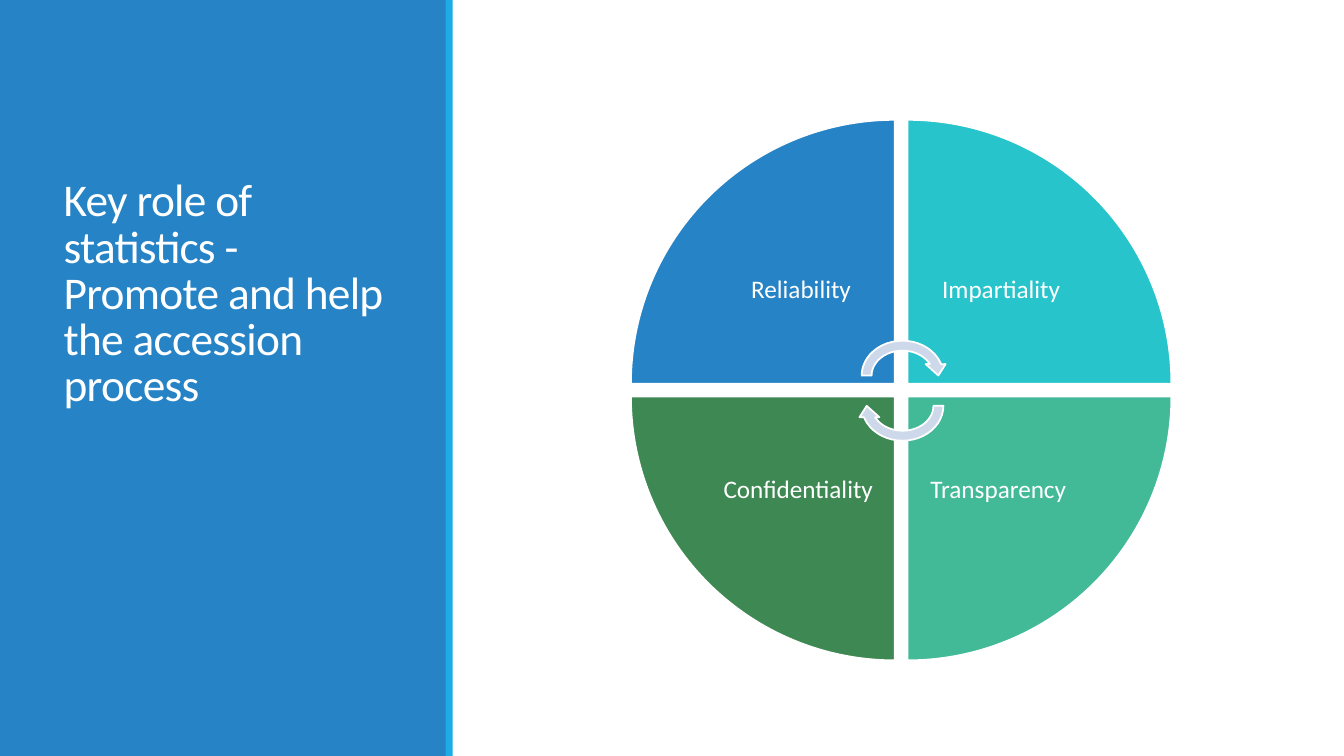
from dataclasses import dataclass

from pptx import Presentation
from pptx.dml.color import RGBColor
from pptx.enum.shapes import MSO_SHAPE as Shape
from pptx.enum.text import MSO_ANCHOR as Anchor, MSO_AUTO_SIZE as AutoSize, PP_ALIGN as Align
from pptx.util import Cm, Pt

FONT = "Calibri"
WHITE, BLUE, SKY, PALE = "FFFFFF", "2683C6", "1CADE4", "CDD9EA"
SLIDE_WIDTH, SLIDE_HEIGHT = 33.87, 19.05

# Lengths of the wheel in centimetres
WHEEL_LEFT, WHEEL_TOP = 15.9, 3.02
WEDGE, STEP, LABEL = 6.65, 6.97, 4.72
ARROW_LEFT, ARROW_WIDTH, ARROW_HEIGHT = 21.59, 2.31, 2.01


@dataclass
class Box:
    left: float
    top: float
    width: float
    height: float

    def lengths(self):
        return [Cm(value) for value in (self.left, self.top, self.width, self.height)]


@dataclass
class Panel:
    box: Box
    color: str


@dataclass
class Quarter:
    text: str
    color: str
    column: int
    row: int
    rotation: int


@dataclass
class Arrow:
    top: float
    rotation: int


PANELS = [
    Panel(Box(0, 0, 11.25, SLIDE_HEIGHT), BLUE),
    Panel(Box(11.23, 0, 0.18, SLIDE_HEIGHT), SKY),
]
QUARTERS = [
    Quarter("Reliability", BLUE, 0, 0, 0),
    Quarter("Impartiality", "28C4CC", 1, 0, 90),
    Quarter("Transparency ", "42BA97", 1, 1, 180),
    Quarter("Confidentiality ", "3E8853", 0, 1, 270),
]
ARROWS = [Arrow(8.46, 0), Arrow(9.22, 180)]


def rgb(color: str) -> RGBColor:
    return RGBColor.from_string(color)


def apply(target, values: dict) -> None:
    for name, value in values.items():
        setattr(target, name, value)


def add_filled(shapes, kind: Shape, box: Box, color: str, rotation: int = 0, outlined: bool = True):
    shape = shapes.add_shape(kind, *box.lengths())
    shape.rotation = rotation
    shape.shadow.inherit = False
    shape.fill.solid()
    shape.fill.fore_color.rgb = rgb(color)
    if outlined:
        shape.line.color.rgb = rgb(WHITE)
        shape.line.width = Pt(1.25)
    else:
        shape.line.fill.background()
    return shape


def write(shape, text: str, size: float, frame_format: dict, paragraph_format: dict):
    frame = shape.text_frame
    apply(frame, {"word_wrap": True, "auto_size": AutoSize.NONE, **frame_format})
    paragraph = frame.paragraphs[0]
    apply(paragraph, paragraph_format)
    run = paragraph.add_run()
    run.text = text
    apply(run.font, {"name": FONT, "size": Pt(size)})
    run.font.color.rgb = rgb(WHITE)
    return run


def add_quarter(shapes, quarter: Quarter) -> None:
    left = WHEEL_LEFT + quarter.column * STEP
    top = WHEEL_TOP + quarter.row * STEP
    add_filled(shapes, Shape.PIE_WEDGE, Box(left, top, WEDGE, WEDGE), quarter.color, quarter.rotation)

    # The label sits in the corner nearest the centre of the wheel
    inset = WEDGE - LABEL
    box = Box(left + inset * (1 - quarter.column), top + inset * (1 - quarter.row), LABEL, LABEL)
    margins = {f"margin_{side}": Cm(0.36) for side in ("left", "top", "right", "bottom")}
    write(shapes.add_textbox(*box.lengths()), quarter.text, 18,
          {"vertical_anchor": Anchor.MIDDLE, **margins},
          {"alignment": Align.CENTER, "line_spacing": 0.9})


def add_title(slide) -> None:
    title = slide.shapes.title
    left, top, width, height = Box(1.35, 4.14, 8.89, 6.35).lengths()
    apply(title, {"left": left, "top": top, "width": width, "height": height})
    run = write(title, "Key role of statistics - Promote and help the accession process", 32.4,
                {"vertical_anchor": Anchor.BOTTOM},
                {"alignment": Align.LEFT, "line_spacing": 0.85})
    run.font._element.set("spc", "-50")
    # Bring the title in front of the side panel
    slide.shapes._spTree.append(title._element)


def main() -> None:
    presentation = Presentation()
    apply(presentation, {"slide_width": Cm(SLIDE_WIDTH), "slide_height": Cm(SLIDE_HEIGHT)})
    slide = presentation.slides.add_slide(presentation.slide_layouts[5])

    # Side panel with the title
    for panel in PANELS:
        add_filled(slide.shapes, Shape.RECTANGLE, panel.box, panel.color, outlined=False)
    add_title(slide)

    # Wheel of four principles with the arrows at its hub
    wheel = slide.shapes.add_group_shape()
    for quarter in QUARTERS:
        add_quarter(wheel.shapes, quarter)
    for arrow in ARROWS:
        box = Box(ARROW_LEFT, arrow.top, ARROW_WIDTH, ARROW_HEIGHT)
        add_filled(wheel.shapes, Shape.CIRCULAR_ARROW, box, PALE, arrow.rotation)

    presentation.save("out.pptx")


if __name__ == "__main__":
    main()
